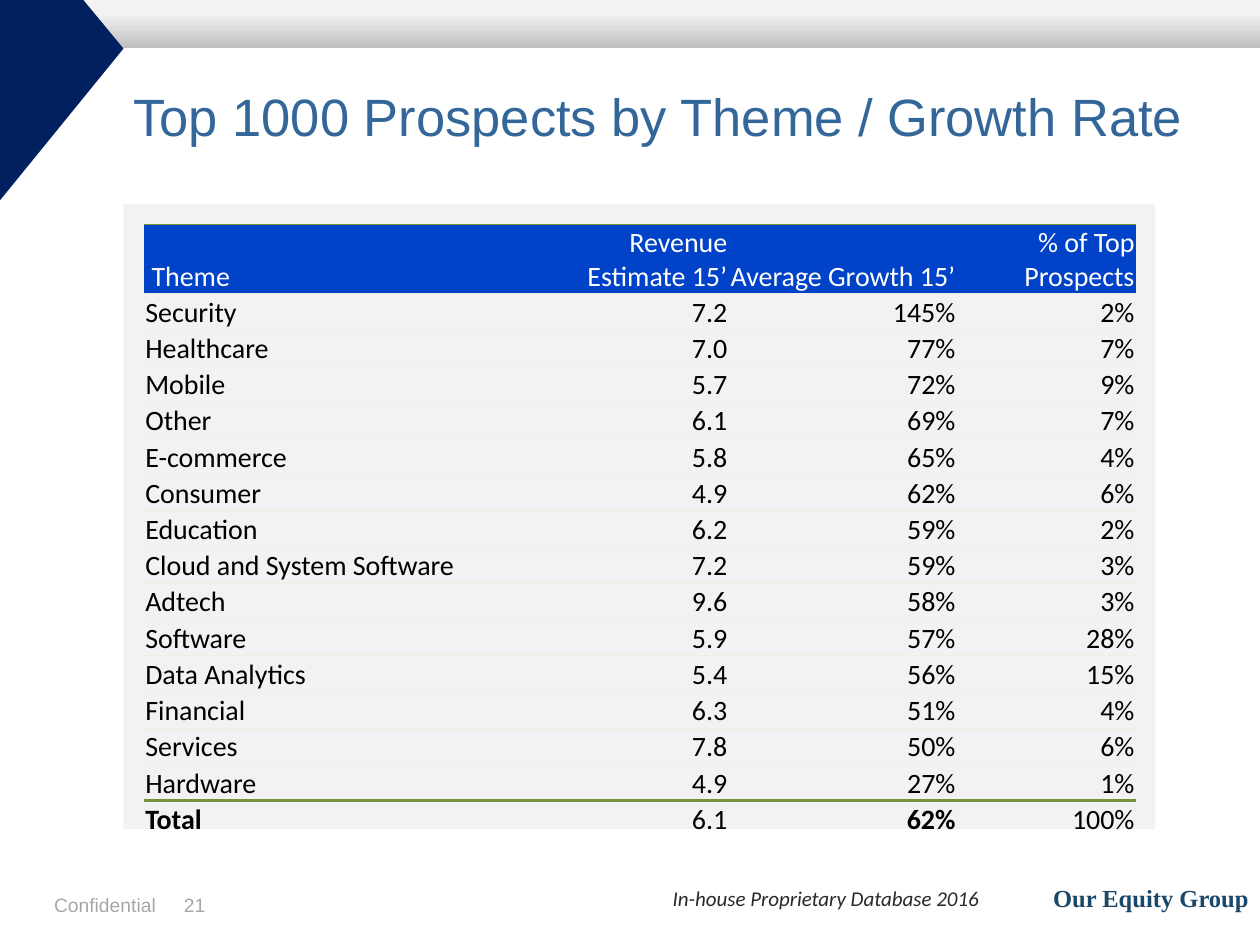
import dataclasses

import lxml.etree
import pptx
import pptx.dml.color
import pptx.enum.shapes
import pptx.enum.text
import pptx.oxml.ns
import pptx.util

Cm = pptx.util.Cm
Pt = pptx.util.Pt
PP_ALIGN = pptx.enum.text.PP_ALIGN
ANCHOR = pptx.enum.text.MSO_ANCHOR
AUTO_SIZE = pptx.enum.text.MSO_AUTO_SIZE


@dataclasses.dataclass(frozen=True)
class Theme:
    """Colours, fonts and type sizes of the deck."""
    white: str = "FFFFFF"
    black: str = "000000"
    navy: str = "002060"
    title: str = "336699"
    header: str = "0042C8"
    panel: str = "F2F2F2"
    bar_dark: str = "BFBFBF"
    footer: str = "A5A6A6"
    source: str = "292929"
    brand: str = "19486A"
    rule: str = "EBF1DE"
    accent: str = "76933C"
    sans: str = "Arial"
    body: str = "Calibri"
    serif: str = "Times New Roman"
    title_size: int = 30
    table_size: int = 16
    brand_size: int = 14
    source_size: int = 12
    footer_size: int = 11


def rgb(value):
    """Return the colour object for a hex string."""
    return pptx.dml.color.RGBColor.from_string(value)


class SlideBuilder:
    """Holds the theme and the current slide and adds elements to it."""

    def __init__(self, s, theme):
        """Keep the slide and its theme."""
        self.s = s
        self.theme = theme

    def style(self, r, color, size, **formats):
        """Apply font formats to a run."""
        for key, value in {"size": Pt(size), **formats}.items():
            setattr(r.font, key, value)
        r.font.color.rgb = rgb(color)

    def rect(self, box, fill, line=None):
        """Add a plain rectangle with an optional outline."""
        kind = pptx.enum.shapes.MSO_SHAPE.RECTANGLE
        sp = self.s.shapes.add_shape(kind, *map(Cm, box))
        sp.shadow.inherit = False
        sp.fill.solid()
        sp.fill.fore_color.rgb = rgb(fill)
        if line:
            sp.line.color.rgb = rgb(line)
            sp.line.width = Pt(2)
        else:
            sp.line.fill.background()
        return sp

    def gradient_bar(self, box, stops):
        """Add a rectangle with a gradient running upwards."""
        sp = self.rect(box, self.theme.panel)
        sp.fill.gradient()
        sp.fill.gradient_angle = 90
        for stop, (position, color) in zip(sp.fill.gradient_stops, stops):
            stop.position = position
            stop.color.rgb = rgb(color)

    def outline(self, points, fill):
        """Add a closed filled polygon."""
        start, *rest = [(Cm(x), Cm(y)) for x, y in points]
        builder = self.s.shapes.build_freeform(*start, scale=1.0)
        builder.add_line_segments(rest, close=True)
        sp = builder.convert_to_shape()
        sp.shadow.inherit = False
        sp.fill.solid()
        sp.fill.fore_color.rgb = rgb(fill)
        sp.line.fill.background()

    def text(self, box, text, color, size, frame=None, spacing=None, **formats):
        """Add a one-line text box."""
        tf = self.s.shapes.add_textbox(*map(Cm, box)).text_frame
        defaults = {"word_wrap": True, "margin_left": 0, "margin_right": 0,
                    "margin_top": 0, "margin_bottom": 0}
        for key, value in (frame or defaults).items():
            setattr(tf, key, value)
        p = tf.paragraphs[0]
        p.line_spacing = spacing
        r = p.add_run()
        r.text = text
        self.style(r, color, size, **formats)
        return tf

    def borders(self, cell, top, bottom):
        """Set the top and bottom rules of a cell and clear its sides."""
        tc_pr = cell._tc.get_or_add_tcPr()
        qn = pptx.oxml.ns.qn
        edges = {"a:lnL": None, "a:lnR": None, "a:lnT": top, "a:lnB": bottom}
        for i, (tag, edge) in enumerate(edges.items()):
            ln = lxml.etree.Element(qn(tag))
            if edge:
                color, width = edge
                ln.set("w", str(Pt(width)))
                fill = lxml.etree.SubElement(ln, qn("a:solidFill"))
                lxml.etree.SubElement(fill, qn("a:srgbClr"), val=color)
            else:
                lxml.etree.SubElement(ln, qn("a:noFill"))
            tc_pr.insert(i, ln)

    def cell(self, cell, text, color, align, bold):
        """Fill one table cell with text."""
        formats = {"margin_left": Cm(0.03), "margin_right": Cm(0.03), "margin_top": Cm(0.03),
                   "margin_bottom": 0, "vertical_anchor": ANCHOR.BOTTOM}
        for key, value in formats.items():
            setattr(cell, key, value)
        p = cell.text_frame.paragraphs[0]
        p.alignment = align
        r = p.add_run()
        r.text = text
        self.style(r, color, self.theme.table_size, name=self.theme.body, bold=bold)

    def table(self, left, top, widths, header_height, row_height, rows):
        """Add the table with a header row and a total row."""
        t = self.theme
        heights = [header_height] + [row_height] * (len(rows) - 1)
        tbl = self.s.shapes.add_table(len(rows), len(widths), Cm(left), Cm(top),
                                      Cm(sum(widths)), Cm(sum(heights))).table
        tbl.first_row = tbl.horz_banding = False
        for column, width in zip(tbl.columns, widths):
            column.width = Cm(width)
        for row, height in zip(tbl.rows, heights):
            row.height = Cm(height)
        edges = [(t.accent, 0.5)] + [(t.rule, 0.5)] * (len(rows) - 2) + [(t.accent, 2), None]
        for i, values in enumerate(rows):
            is_header, is_total = i == 0, i == len(rows) - 1
            for j, value in enumerate(values):
                cell = tbl.cell(i, j)
                self.cell(cell, value, t.white if is_header else t.black,
                          PP_ALIGN.RIGHT if j else PP_ALIGN.LEFT, is_total and j in (0, 2))
                if is_header:
                    cell.fill.solid()
                    cell.fill.fore_color.rgb = rgb(t.header)
                else:
                    cell.fill.background()
                self.borders(cell, edges[i], edges[i + 1])


ROWS = [
    (" Theme", "Revenue Estimate 15’", "Average Growth 15’", "% of Top Prospects"),
    ("Security", "7.2", "145%", "2%"),
    ("Healthcare", "7.0", "77%", "7%"),
    ("Mobile", "5.7", "72%", "9%"),
    ("Other", "6.1", "69%", "7%"),
    ("E-commerce", "5.8", "65%", "4%"),
    ("Consumer", "4.9", "62%", "6%"),
    ("Education", "6.2", "59%", "2%"),
    ("Cloud and System Software", "7.2", "59%", "3%"),
    ("Adtech", "9.6", "58%", "3%"),
    ("Software", "5.9", "57%", "28%"),
    ("Data Analytics", "5.4", "56%", "15%"),
    ("Financial", "6.3", "51%", "4%"),
    ("Services", "7.8", "50%", "6%"),
    ("Hardware", "4.9", "27%", "1%"),
    ("Total", "6.1", "62%", "100%"),
]


def main():
    """Build the slide and save it."""
    prs = pptx.Presentation()
    prs.slide_width, prs.slide_height = Cm(25.4), Cm(19.05)
    t = Theme()
    b = SlideBuilder(prs.slides.add_slide(prs.slide_layouts[6]), t)
    b.gradient_bar((0, 0, 25.4, 0.97), [(0, t.bar_dark), (0.72, t.panel)])
    b.outline([(0, 0), (1.68, 0), (2.49, 0.98), (0, 4.04)], t.navy)
    for left, width, text in [(3.71, 1.6, "21"), (1.09, 2.39, "Confidential")]:
        b.text((left, 18.01, width, 0.74), text, t.footer, t.footer_size, name=t.sans)
    title = b.text((2.69, 1.12, 21.79, 2.59), "Top 1000 Prospects by Theme / Growth Rate",
                   t.title, t.title_size, spacing=0.9, name=t.sans)
    title.vertical_anchor = ANCHOR.MIDDLE
    b.rect((2.49, 4.11, 20.8, 12.6), t.panel)
    b.table(2.9, 4.52, (7.8, 3.99, 4.6, 3.61), 1.4, 0.73, ROWS)
    b.rect((21.31, 17.12, 3.81, 1.73), t.white, t.white)
    label = {"word_wrap": False, "auto_size": AUTO_SIZE.SHAPE_TO_FIT_TEXT}
    b.text((20.98, 17.68, 4.52, 0.86), "Our Equity Group", t.brand, t.brand_size, label,
           name=t.serif, bold=True)
    b.text((13.31, 17.73, 7.21, 0.76), "In-house Proprietary Database 2016", t.source,
           t.source_size, label, name=t.body, italic=True)
    prs.save("out.pptx")


if __name__ == "__main__":
    main()
